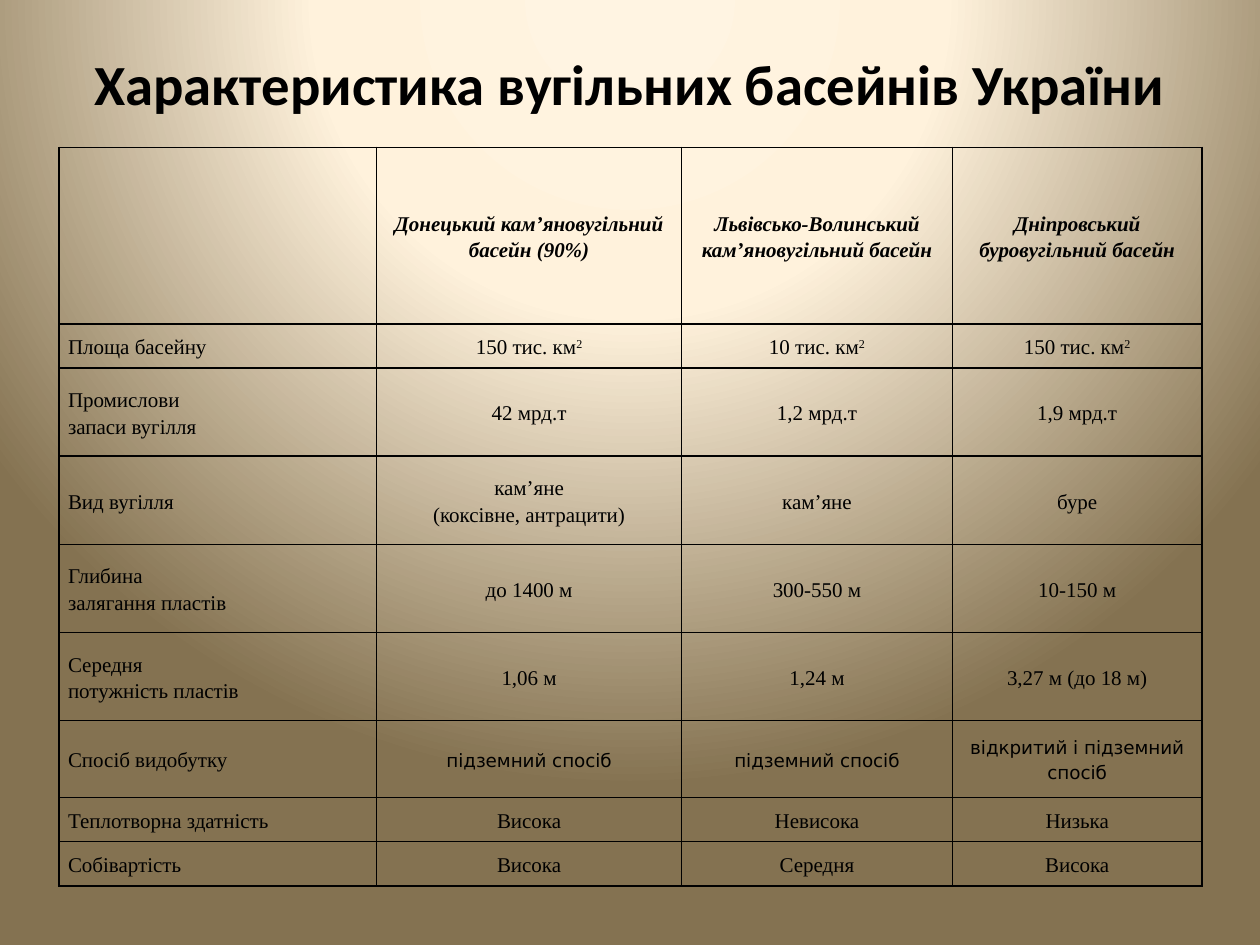
"""Build a slide with a table comparing the coal basins of Ukraine."""
from pptx import Presentation
from pptx.dml.color import RGBColor
from pptx.enum.text import MSO_ANCHOR as Anchor, PP_ALIGN as Align
from pptx.oxml import parse_xml
from pptx.oxml.ns import nsdecls, qn
from pptx.util import Inches, Pt


def add_run(paragraph, text, size, font, bold=False, italic=False, color="000000"):
    run = paragraph.add_run()
    run.text = text
    run.font.size, run.font.name = Pt(size), font
    run.font.bold, run.font.italic = bold, italic
    run.font.color.rgb = RGBColor.from_string(color)
    return run


COLUMNS = [2.52, 2.42, 2.15, 1.98]
HEIGHTS = [1.4, 0.35, 0.7, 0.7, 0.7, 0.7, 0.61, 0.35, 0.35]
METHOD_ROW = 6
BASINS = [
    ["", "Донецький кам’яновугільний басейн (90%)",
     "Львівсько-Волинський кам’яновугільний басейн", "Дніпровський буровугільний басейн"],
    ["Площа басейну", "150 тис. км^2", "10 тис. км^2", "150 тис. км^2"],
    ["Промислови\nзапаси вугілля", "42 мрд.т", "1,2 мрд.т", "1,9 мрд.т"],
    ["Вид вугілля", "кам’яне\n(коксівне, антрацити)", "кам’яне", "буре"],
    ["Глибина\nзалягання пластів", "до 1400 м", "300-550 м", "10-150 м"],
    ["Середня\nпотужність пластів", "1,06 м", "1,24 м", "3,27 м (до 18 м)"],
    ["Спосіб видобутку", "підземний спосіб", "підземний спосіб", "відкритий і підземний спосіб"],
    ["Теплотворна здатність", "Висока", "Невисока", "Низька"],
    ["Собівартість", "Висока", "Середня", "Висока"],
]

deck = Presentation()
deck.slide_width, deck.slide_height = Inches(10), Inches(7.5)
slide = deck.slides.add_slide(deck.slide_layouts[5])

slide.background.fill.gradient()
glow = slide.element.find(".//" + qn("a:gradFill"))
stops = "".join(
    f'<a:gs pos="{share * 1000}"><a:srgbClr val="{color}"/></a:gs>'
    for share, color in [(0, "FFF4E2"), (40, "FFF2DC"), (100, "847251")]
)
glow.getparent().replace(glow, parse_xml(
    f'<a:gradFill {nsdecls("a")} rotWithShape="1"><a:gsLst>{stops}</a:gsLst><a:path path="circle">'
    '<a:fillToRect l="50000" t="-80000" r="50000" b="180000"/></a:path></a:gradFill>'
))

heading = slide.shapes.title
heading.left, heading.top = Inches(0.5), Inches(0.3)
heading.width, heading.height = Inches(9), Inches(0.72)
heading.text_frame.vertical_anchor = Anchor.MIDDLE
heading_line = heading.text_frame.paragraphs[0]
heading_line.alignment = Align.CENTER
add_run(heading_line, "Характеристика вугільних басейнів України", 32.4, "Calibri", bold=True)

comparison = slide.shapes.add_table(
    len(HEIGHTS), len(COLUMNS), Inches(0.47), Inches(1.17),
    Inches(sum(COLUMNS)), Inches(sum(HEIGHTS)),
).table
comparison.first_row = comparison.horz_banding = False
for column, width in zip(comparison.columns, COLUMNS):
    column.width = Inches(width)
for row, height in zip(comparison.rows, HEIGHTS):
    row.height = Inches(height)

for r, facts in enumerate(BASINS):
    for c, fact in enumerate(facts):
        cell = comparison.cell(r, c)
        cell.fill.background()
        cell.vertical_anchor = Anchor.MIDDLE
        cell.margin_left = cell.margin_right = Inches(0.07)
        cell.margin_top = cell.margin_bottom = 0
        for place, side in enumerate("LRTB"):
            cell._tc.get_or_add_tcPr().insert(place, parse_xml(
                f'<a:ln{side} {nsdecls("a")} w="{Pt(1)}"><a:solidFill>'
                f'<a:srgbClr val="000000"/></a:solidFill></a:ln{side}>'
            ))
        size, font = (10.5, "DejaVu Sans") if r == METHOD_ROW and c else (12, "Times New Roman")
        for n, line in enumerate(fact.split("\n") if fact else []):
            paragraph = cell.text_frame.add_paragraph() if n else cell.text_frame.paragraphs[0]
            paragraph.alignment = Align.CENTER if c else Align.LEFT
            paragraph.line_spacing = 1.15
            base, _, power = line.partition("^")
            add_run(paragraph, base, size, font, bold=r == 0, italic=r == 0)
            if power:
                raised = add_run(paragraph, power, size, font)
                raised._r.get_or_add_rPr().set("baseline", "30000")

deck.save("out.pptx")
